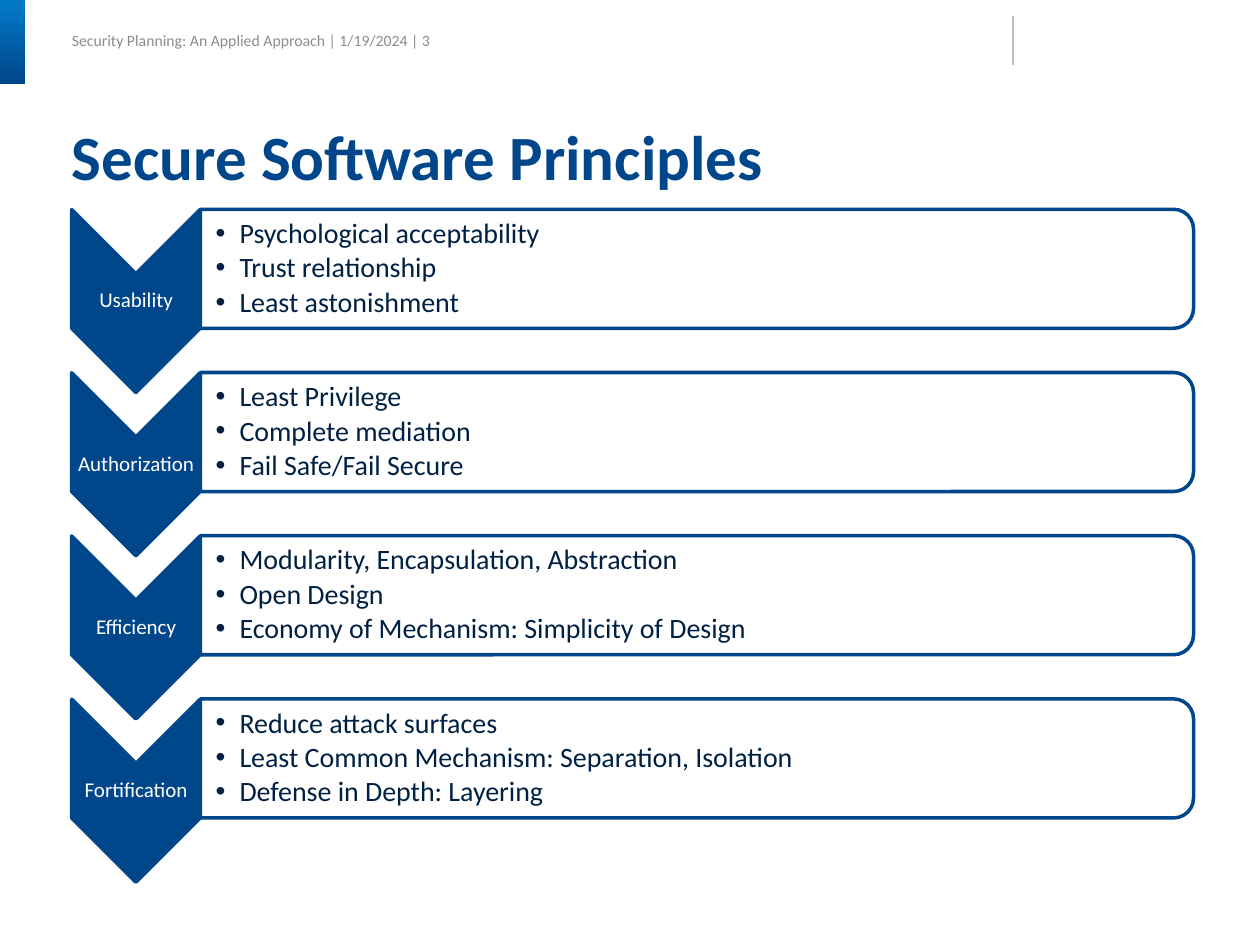
from dataclasses import dataclass

from lxml.etree import SubElement
from pptx import Presentation
from pptx.dml.color import RGBColor
from pptx.enum.shapes import MSO_CONNECTOR, MSO_SHAPE
from pptx.enum.text import MSO_ANCHOR, MSO_AUTO_SIZE, PP_ALIGN
from pptx.oxml.ns import qn
from pptx.util import Cm, Pt


@dataclass(frozen=True)
class Theme:
    font: str = "Calibri"
    navy: RGBColor = RGBColor(0x00, 0x46, 0x8A)
    bright: RGBColor = RGBColor(0x01, 0x76, 0xC3)
    ink: RGBColor = RGBColor(0x00, 0x21, 0x43)
    white: RGBColor = RGBColor(0xFF, 0xFF, 0xFF)
    gray: RGBColor = RGBColor(0x8C, 0x8C, 0x8C)
    rule: RGBColor = RGBColor(0xBF, 0xBF, 0xBF)
    title_size: Pt = Pt(36)
    body_size: Pt = Pt(16)
    label_size: Pt = Pt(12)
    header_size: Pt = Pt(9)


THEME = Theme()
HEADER = "Security Planning: An Applied Approach | 1/19/2024 | 3"
TITLE = "Secure Software Principles"
PRINCIPLES = [
    ("Usability", ["Psychological acceptability", "Trust relationship",
                   "Least astonishment"]),
    ("Authorization", ["Least Privilege", "Complete mediation",
                       "Fail Safe/Fail Secure"]),
    ("Efficiency", ["Modularity, Encapsulation, Abstraction", "Open Design",
                    "Economy of Mechanism: Simplicity of Design"]),
    ("Fortification", ["Reduce attack surfaces",
                       "Least Common Mechanism: Separation, Isolation",
                       "Defense in Depth: Layering"]),
]
FIRST_CENTER = 5.42
ROW_PITCH = 3.29


def set_frame(frame, anchor, insets=(0, 0, 0, 0), wrap=True):
    frame.word_wrap = wrap
    frame.auto_size = MSO_AUTO_SIZE.NONE
    frame.vertical_anchor = anchor
    (frame.margin_left, frame.margin_top,
     frame.margin_right, frame.margin_bottom) = map(Cm, insets)


def add_span(para, text, size, color, bold=False):
    span = para.add_run()
    span.text = text
    span.font.name = THEME.font
    span.font.size = size
    span.font.bold = bold
    span.font.color.rgb = color


def add_text_box(page, left, top, width, height, **frame_options):
    box = page.shapes.add_textbox(Cm(left), Cm(top), Cm(width), Cm(height))
    set_frame(box.text_frame, MSO_ANCHOR.MIDDLE, **frame_options)
    return box.text_frame


def add_bullet(para):
    properties = para._p.get_or_add_pPr()
    properties.set("marL", str(Cm(0.48)))
    properties.set("indent", str(Cm(-0.48)))
    SubElement(properties, qn("a:buFont"), typeface="Arial")
    SubElement(properties, qn("a:buChar"), char="•")


def add_turned_shape(page, kind, center_x, center_y, width, height, fill):
    """Add a navy-outlined shape turned a quarter clockwise about its centre."""
    shape = page.shapes.add_shape(
        kind, Cm(center_x - width / 2), Cm(center_y - height / 2),
        Cm(width), Cm(height))
    shape.rotation = 90
    shape.shadow.inherit = False
    shape.fill.solid()
    shape.fill.fore_color.rgb = fill
    shape.line.color.rgb = THEME.navy
    shape.line.width = Pt(2)
    SubElement(shape._element.spPr.find(qn("a:ln")), qn("a:round"))


def add_principle(page, center, label, points):
    """Add one chevron with its label, and the list box to its right."""
    add_turned_shape(page, MSO_SHAPE.CHEVRON, 2.74, center + 0.65,
                     3.69, 2.59, THEME.navy)
    frame = add_text_box(page, 1.45, center + 0.09, 2.59, 1.12,
                         insets=(0.02, 0.02, 0.02, 0.02))
    para = frame.paragraphs[0]
    para.alignment = PP_ALIGN.CENTER
    para.line_spacing = 0.9
    add_span(para, label, THEME.label_size, THEME.white)

    add_turned_shape(page, MSO_SHAPE.ROUND_2_SAME_RECTANGLE, 14.05, center,
                     2.4, 20.02, THEME.white)
    frame = add_text_box(page, 4.04, center - 1.08, 19.91, 2.16,
                         insets=(0.31, 0.02, 0.02, 0.02))
    for index, point in enumerate(points):
        para = frame.add_paragraph() if index else frame.paragraphs[0]
        add_bullet(para)
        para.line_spacing = 0.9
        para.space_after = Pt(2.4)
        add_span(para, point, THEME.body_size, THEME.ink)


def add_header(page):
    frame = add_text_box(page, 1.45, 0.58, 7.21, 0.58,
                         insets=(0, 0, 0.51, 0.1), wrap=False)
    add_span(frame.paragraphs[0], HEADER, THEME.header_size, THEME.gray)

    tab = page.shapes.add_shape(MSO_SHAPE.RECTANGLE, 0, 0, Cm(0.51), Cm(1.7))
    tab.shadow.inherit = False
    tab.line.fill.background()
    tab.fill.gradient()
    tab.fill.gradient_angle = 270
    stops = [(0.1, THEME.bright), (1, THEME.navy)]
    for stop, (position, color) in zip(tab.fill.gradient_stops, stops):
        stop.position = position
        stop.color.rgb = color

    divider = page.shapes.add_connector(
        MSO_CONNECTOR.STRAIGHT, Cm(20.42), Cm(0.33), Cm(20.42), Cm(1.32))
    divider.line.color.rgb = THEME.rule
    divider.line.width = Pt(0.75)
    SubElement(divider._element.spPr, qn("a:effectLst"))


def set_title(page):
    title = page.shapes.title
    title.left, title.top = Cm(1.45), Cm(2.54)
    title.width, title.height = Cm(22.66), Cm(1.4)
    set_frame(title.text_frame, MSO_ANCHOR.TOP)
    para = title.text_frame.paragraphs[0]
    para.alignment = PP_ALIGN.LEFT
    para.line_spacing = 0.9
    add_span(para, TITLE, THEME.title_size, THEME.navy, bold=True)


def main():
    deck = Presentation()
    deck.slide_width, deck.slide_height = Cm(25.4), Cm(19.05)
    page = deck.slides.add_slide(deck.slide_layouts.get_by_name("Title Only"))
    add_header(page)
    set_title(page)
    for row, (label, points) in enumerate(PRINCIPLES):
        add_principle(page, FIRST_CENTER + row * ROW_PITCH, label, points)
    deck.save("out.pptx")


if __name__ == "__main__":
    main()
